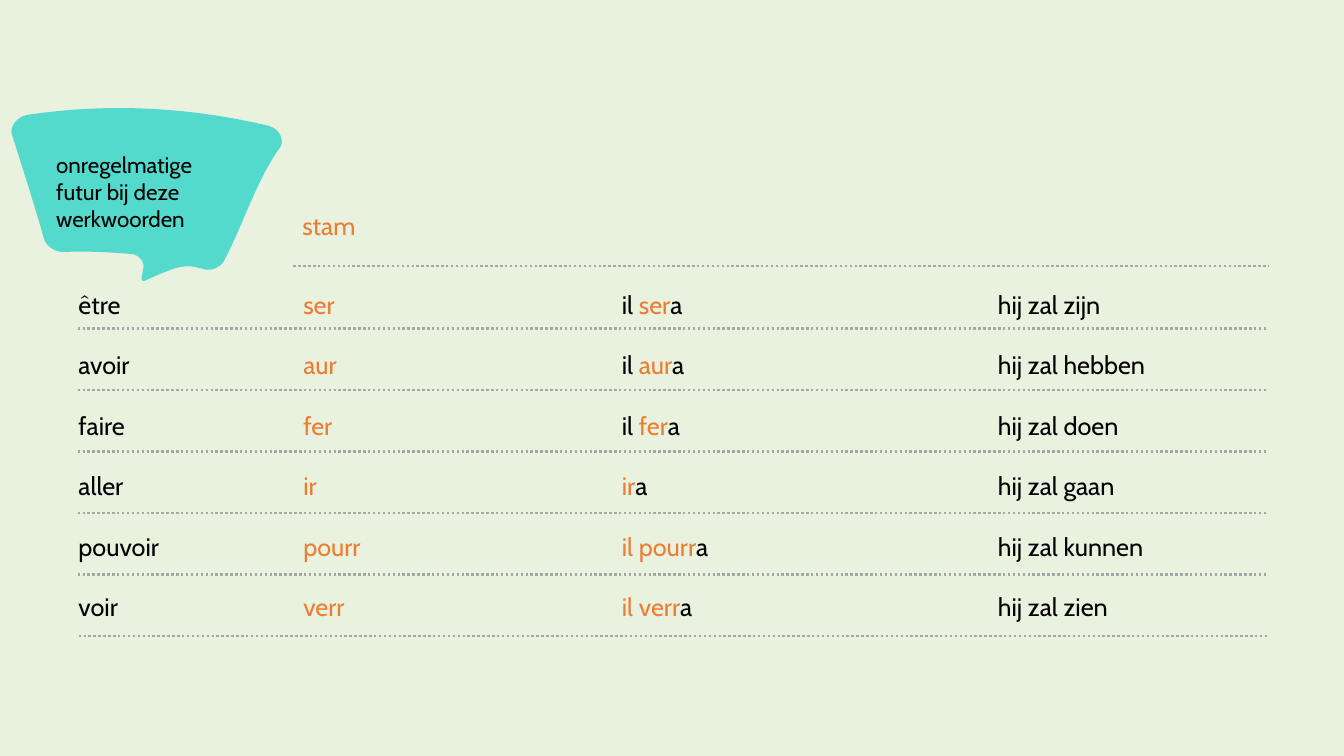
"""Build a slide listing French verbs with an irregular future stem."""
from dataclasses import dataclass
from itertools import chain

import lxml.etree
import pptx
import pptx.dml.color
import pptx.enum.dml
import pptx.enum.shapes
import pptx.enum.text
import pptx.oxml.ns
import pptx.util
from pptx.util import Inches

BLACK, ORANGE, GREY, TEAL, CREAM = "000000", "ED7D31", "A5A5A5", "54D9CD", "E9F1DF"
FIRST_RULE, RULE_GAP = 3.26, 0.61


@dataclass
class TextBlock:
    left: float
    top: float
    width: float
    height: float
    paragraphs: list[str]
    color: str = BLACK
    size: int = 18
    spacing: float | None = None


@dataclass
class Rule:
    left: float
    right: float
    y: float


VERBS = TextBlock(0.68, 2.52, 5.59, 3.65,
                  ["être", "avoir", "faire", "aller\npouvoir", "voir"], spacing=2.0)
COLUMNS = [
    TextBlock(6.07, 2.52, 3.1, 3.65,
              ["il |ser|a", "il |aur|a", "il |fer|a\n|ir|a\n|il pourr|a\n|il verr|a"],
              spacing=2.0),
    TextBlock(2.91, 2.52, 3.1, 4.04,
              ["ser", "aur", "fer\nir\npourr\nverr"], ORANGE, spacing=2.0),
    TextBlock(9.8, 2.52, 3.1, 4.04,
              ["hij zal zijn", "hij zal hebben",
               "hij zal doen\nhij zal gaan\nhij zal kunnen\nhij zal zien"], spacing=2.0),
    TextBlock(2.9, 2.04, 3.13, 0.4, ["stam"], ORANGE),
]
BUBBLE_TEXT = TextBlock(0.46, 1.45, 2.23, 0.91,
                        ["onregelmatige \nfutur bij deze \nwerkwoorden"], size=16)

RULES = [Rule(0.77, 12.58, FIRST_RULE + i * RULE_GAP) for i in range(5)]
RULES += [Rule(2.91, 12.59, 2.64), Rule(0.78, 12.59, FIRST_RULE + 5 * RULE_GAP)]

BUBBLE_START = (2.22, 2.59)
BUBBLE_CURVES = [
    ((2.18, 2.66), (2.09, 2.69), (2.02, 2.67)),
    ((2.0, 2.66), (1.99, 2.66), (1.98, 2.66)),
    ((1.89, 2.63), (1.8, 2.64), (1.71, 2.67)),
    ((1.63, 2.7), (1.53, 2.74), (1.45, 2.78)),
    ((1.38, 2.81), (1.41, 2.75), (1.42, 2.67)),
    ((1.44, 2.6), (1.39, 2.54), (1.32, 2.52)),
    ((1.31, 2.52), (1.31, 2.52), (1.3, 2.52)),
    ((1.08, 2.5), (0.85, 2.49), (0.63, 2.5)),
    ((0.55, 2.5), (0.47, 2.45), (0.44, 2.38)),
    ((0.36, 2.09), (0.21, 1.62), (0.12, 1.34)),
    ((0.09, 1.27), (0.16, 1.16), (0.27, 1.14)),
    ((1.07, 1.02), (1.88, 1.06), (2.67, 1.25)),
    ((2.78, 1.28), (2.82, 1.4), (2.78, 1.46)),
    ((2.55, 1.77), (2.4, 2.26), (2.22, 2.59)),
]


def rgb(color: str) -> pptx.dml.color.RGBColor:
    """Turn a hex string into a colour."""
    return pptx.dml.color.RGBColor.from_string(color)


def fill_plain(sp: pptx.shapes.autoshape.Shape, color: str) -> None:
    """Give a shape a flat fill without line or shadow."""
    sp.shadow.inherit = False
    sp.fill.solid()
    sp.fill.fore_color.rgb = rgb(color)
    sp.line.fill.background()


def add_text(s: pptx.slide.Slide, block: TextBlock) -> None:
    """Write a text box; parts between bars are orange."""
    sp = s.shapes.add_textbox(*map(Inches, (block.left, block.top, block.width, block.height)))
    tf = sp.text_frame
    tf.word_wrap = True
    tf.auto_size = pptx.enum.text.MSO_AUTO_SIZE.SHAPE_TO_FIT_TEXT
    for i, text in enumerate(block.paragraphs):
        p = tf.add_paragraph() if i else tf.paragraphs[0]
        p.line_spacing = block.spacing
        p.font.name = "Cabin"
        p.font.size = pptx.util.Pt(block.size)
        p.font.color.rgb = rgb(block.color)
        for k, line in enumerate(text.split("\n")):
            if k:
                p.add_line_break()
            for j, part in enumerate(line.split("|")):
                if part:
                    r = p.add_run()
                    r.text = part
                    if j % 2:
                        r.font.color.rgb = rgb(ORANGE)


def add_rule(s: pptx.slide.Slide, rule: Rule) -> None:
    """Draw a dotted horizontal line."""
    y = Inches(rule.y)
    cxn = s.shapes.add_connector(pptx.enum.shapes.MSO_CONNECTOR.STRAIGHT,
                                 Inches(rule.left), y, Inches(rule.right), y)
    cxn.line.color.rgb = rgb(GREY)
    cxn.line.width = pptx.util.Pt(1.75)
    cxn.line.dash_style = pptx.enum.dml.MSO_LINE.ROUND_DOT
    lxml.etree.SubElement(cxn._element.spPr, pptx.oxml.ns.qn("a:effectLst"))


def add_bubble(s: pptx.slide.Slide) -> None:
    """Draw the speech bubble, each three points forming one cubic curve."""
    qn = pptx.oxml.ns.qn
    fb = s.shapes.build_freeform(*map(Inches, BUBBLE_START))
    fb.add_line_segments([(Inches(x), Inches(y)) for x, y in chain(*BUBBLE_CURVES)])
    sp = fb.convert_to_shape()
    segments = list(sp._element.iter(qn("a:lnTo")))
    for i in range(0, 3 * len(BUBBLE_CURVES), 3):
        curve = lxml.etree.Element(qn("a:cubicBezTo"))
        segments[i].addprevious(curve)
        for segment in segments[i:i + 3]:
            curve.append(segment[0])
            segment.getparent().remove(segment)
    fill_plain(sp, TEAL)


def main() -> None:
    """Build and save the slide."""
    prs = pptx.Presentation()
    prs.slide_width, prs.slide_height = Inches(13.33), Inches(7.5)
    s = prs.slides.add_slide(prs.slide_layouts[6])
    backdrop = s.shapes.add_shape(pptx.enum.shapes.MSO_SHAPE.RECTANGLE, 0, 0,
                                  prs.slide_width, prs.slide_height)
    fill_plain(backdrop, CREAM)
    add_text(s, VERBS)
    for rule in RULES:
        add_rule(s, rule)
    for block in COLUMNS:
        add_text(s, block)
    add_bubble(s)
    add_text(s, BUBBLE_TEXT)
    prs.save("out.pptx")


if __name__ == "__main__":
    main()
